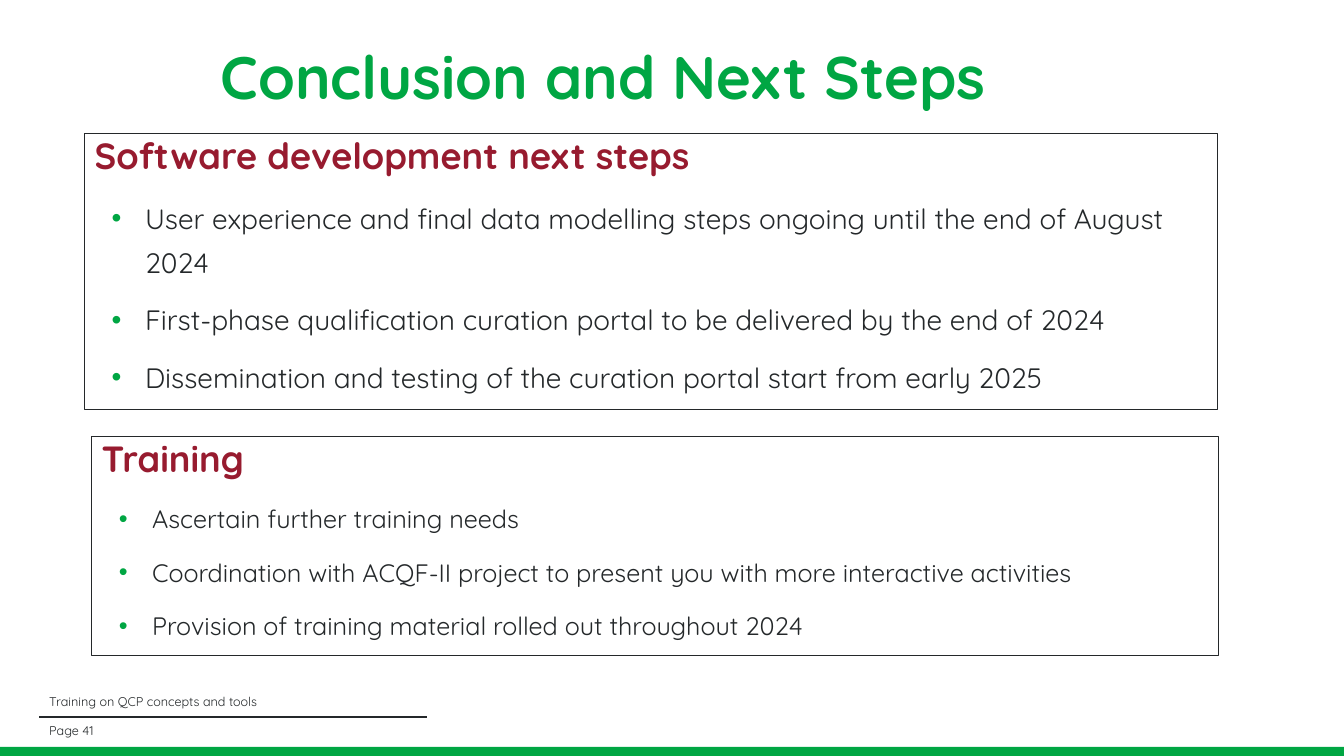
import pptx
import pptx.util
import pptx.dml.color
import pptx.enum.shapes
import pptx.enum.text
import pptx.oxml.ns
import lxml.etree

Inches = pptx.util.Inches
Pt = pptx.util.Pt
COLORS = {"green": "00A643", "red": "971B2F", "dark": "24282A"}


def format_paragraph(paragraph, size, color, bold=False):
    paragraph.alignment = pptx.enum.text.PP_ALIGN.LEFT
    for run in paragraph.runs:
        run.font.name = "Quicksand"
        run.font.size = Pt(size)
        run.font.bold = bold
        run.font.color.rgb = pptx.dml.color.RGBColor.from_string(COLORS[color])


def add_bullet(paragraph):
    properties = paragraph._p.get_or_add_pPr()
    properties.set("marL", str(Inches(0.5)))
    properties.set("indent", str(Inches(-0.33)))
    bullet_color = lxml.etree.SubElement(properties, pptx.oxml.ns.qn("a:buClr"))
    lxml.etree.SubElement(bullet_color, pptx.oxml.ns.qn("a:srgbClr"), val=COLORS["green"])
    lxml.etree.SubElement(properties, pptx.oxml.ns.qn("a:buFont"), typeface="Arial")
    lxml.etree.SubElement(properties, pptx.oxml.ns.qn("a:buChar"), char="•")


presentation = pptx.Presentation()
presentation.slide_width = Inches(13.33)
presentation.slide_height = Inches(7.5)
slide = presentation.slides.add_slide(presentation.slide_layouts[6])

footer_bar = slide.shapes.add_shape(
    pptx.enum.shapes.MSO_SHAPE.RECTANGLE, Inches(0), Inches(7.41), Inches(13.33), Inches(0.09))
footer_bar.shadow.inherit = False
footer_bar.fill.solid()
footer_bar.fill.fore_color.rgb = pptx.dml.color.RGBColor.from_string(COLORS["green"])
footer_bar.line.fill.background()

footer_line = slide.shapes.add_connector(
    pptx.enum.shapes.MSO_CONNECTOR.STRAIGHT, Inches(0.39), Inches(7.11), Inches(4.24), Inches(7.11))
footer_line.line.color.rgb = pptx.dml.color.RGBColor.from_string(COLORS["dark"])
footer_line.line.width = Pt(1.5)
lxml.etree.SubElement(footer_line._element.spPr, pptx.oxml.ns.qn("a:effectLst"))

labels = [
    ("Conclusion and Next Steps", 2.09, 0.16, 11.24, 1.26, 42.9, "green", True, 0.9),
    ("Training on QCP concepts and tools", 0.39, 6.86, 4.06, 0.19, 9, "dark", False, 1.0),
    ("Page 41", 0.39, 7.15, 4.06, 0.19, 9, "dark", False, 1.0),
]
for text, left, top, width, height, size, color, bold, spacing in labels:
    label = slide.shapes.add_textbox(Inches(left), Inches(top), Inches(width), Inches(height))
    label.text_frame.word_wrap = True
    label.text_frame.vertical_anchor = pptx.enum.text.MSO_ANCHOR.MIDDLE
    label.text_frame.text = text
    paragraph = label.text_frame.paragraphs[0]
    paragraph.line_spacing = spacing
    format_paragraph(paragraph, size, color, bold)

panels = [
    ("Software development next steps", 0.84, 1.32, 11.24, 2.74, 20, [
        "User experience and final data modelling steps ongoing until the end of August 2024",
        "First-phase qualification curation portal to be delivered by the end of 2024",
        "Dissemination and testing of the curation portal start from early 2025",
    ]),
    ("Training", 0.91, 4.33, 11.18, 2.17, 18, [
        "Ascertain further training needs",
        "Coordination with ACQF-II project to present you with more interactive activities",
        "Provision of training material rolled out throughout 2024",
    ]),
]
for heading, left, top, width, height, size, steps in panels:
    panel = slide.shapes.add_shape(
        pptx.enum.shapes.MSO_SHAPE.RECTANGLE, Inches(left), Inches(top), Inches(width), Inches(height))
    panel.shadow.inherit = False
    panel.fill.background()
    panel.line.color.rgb = pptx.dml.color.RGBColor.from_string(COLORS["dark"])
    panel.line.width = Pt(0.75)
    text_frame = panel.text_frame
    text_frame.word_wrap = True
    text_frame.vertical_anchor = pptx.enum.text.MSO_ANCHOR.TOP
    text_frame.text = heading
    text_frame.paragraphs[0].line_spacing = 0.9
    format_paragraph(text_frame.paragraphs[0], 26, "red", True)
    for step in steps:
        paragraph = text_frame.add_paragraph()
        paragraph.text = step
        paragraph.line_spacing = 1.3
        paragraph.space_before = Pt(10)
        add_bullet(paragraph)
        format_paragraph(paragraph, size, "dark")

presentation.save("out.pptx")
